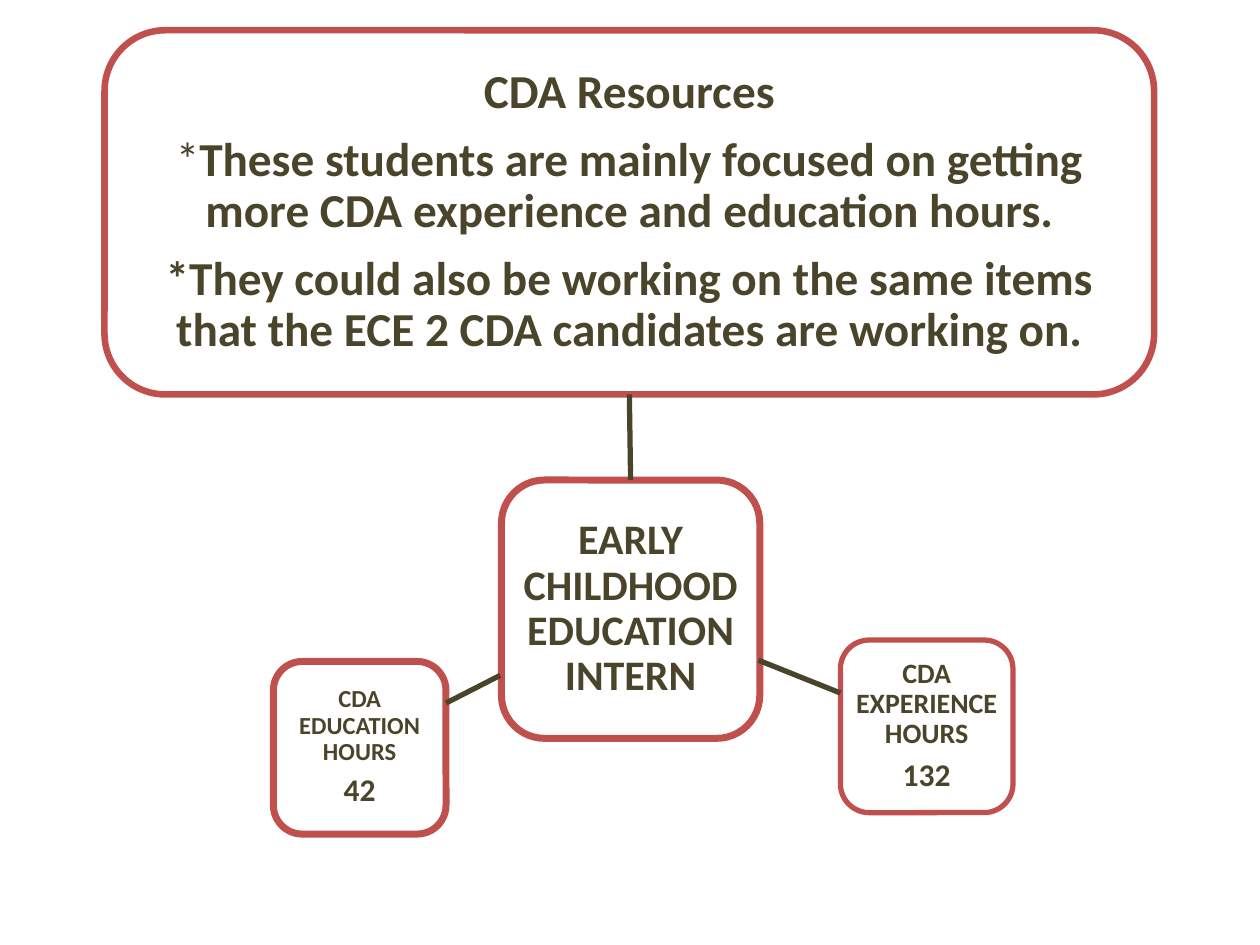
from lxml import etree
from pptx import Presentation
from pptx.dml.color import RGBColor
from pptx.enum import shapes, text
from pptx.oxml.ns import qn
from pptx.util import Inches, Pt

COLORS = {"border": "C0504D", "ink": "4A452A"}

deck = Presentation()
deck.slide_width, deck.slide_height = Inches(10), Inches(7.5)
slide = deck.slides.add_slide(deck.slide_layouts[6])


def add_box(left, top, width, height, border, inset, paragraphs):
    """Add a rounded box; paragraphs are (size, [(words, bold), ...])."""
    box = slide.shapes.add_shape(
        shapes.MSO_SHAPE.ROUNDED_RECTANGLE,
        Inches(left), Inches(top), Inches(width), Inches(height))
    box.shadow.inherit = False
    box.fill.background()
    box.line.color.rgb = RGBColor.from_string(COLORS["border"])
    box.line.width = Pt(border)
    frame = box.text_frame
    frame.word_wrap = True
    frame.vertical_anchor = text.MSO_ANCHOR.MIDDLE
    frame.margin_left = frame.margin_right = Inches(inset)
    frame.margin_top = frame.margin_bottom = Inches(inset)
    for index, (size, runs) in enumerate(paragraphs):
        paragraph = frame.add_paragraph() if index else frame.paragraphs[0]
        paragraph.alignment = text.PP_ALIGN.CENTER
        paragraph.line_spacing = 0.9
        paragraph.space_after = Pt(round(size * 0.35, 1))
        paragraph.font.name = "Calibri"
        paragraph.font.size = Pt(size)
        paragraph.font.color.rgb = RGBColor.from_string(COLORS["ink"])
        for words, bold in runs:
            run = paragraph.add_run()
            run.text = words
            run.font.bold = bold
    return box


def add_link(x1, y1, x2, y2):
    link = slide.shapes.add_connector(
        shapes.MSO_CONNECTOR.STRAIGHT,
        Inches(x1), Inches(y1), Inches(x2), Inches(y2))
    link.line.color.rgb = RGBColor.from_string(COLORS["ink"])
    link.line.width = Pt(3)
    etree.SubElement(link._element.spPr, qn("a:effectLst"))
    return link


intern = add_box(3.98, 3.81, 2.05, 2.05, 4, 0.07, [
    (24, [("EARLY CHILDHOOD EDUCATION INTERN", True)]),
])
resources = add_box(0.83, 0.24, 8.33, 2.89, 3.75, 0.07, [
    (27, [("CDA Resources", True)]),
    (27, [("*", False),
          ("These students are mainly focused on getting more CDA "
           "experience and education hours.", True)]),
    (27, [("*They could also be working on the same items that the "
           "ECE 2 CDA candidates are working on.", True)]),
])

hours = [
    (6.67, 5.08, 3, 16, "CDA EXPERIENCE HOURS", "132"),
    (2.17, 5.25, 4, 14, "CDA EDUCATION HOURS", "42"),
]
for left, top, border, size, label, count in hours:
    add_box(left, top, 1.37, 1.37, border, 0.04,
            [(size, [(label, True)]), (18, [(count, True)])])

resources_link = add_link(5, 3.81, 5, 3.13)
resources_link.begin_connect(intern, 0)
resources_link.end_connect(resources, 2)
add_link(6.02, 5.24, 6.67, 5.5)
add_link(3.97, 5.36, 3.54, 5.58)

deck.save("out.pptx")
